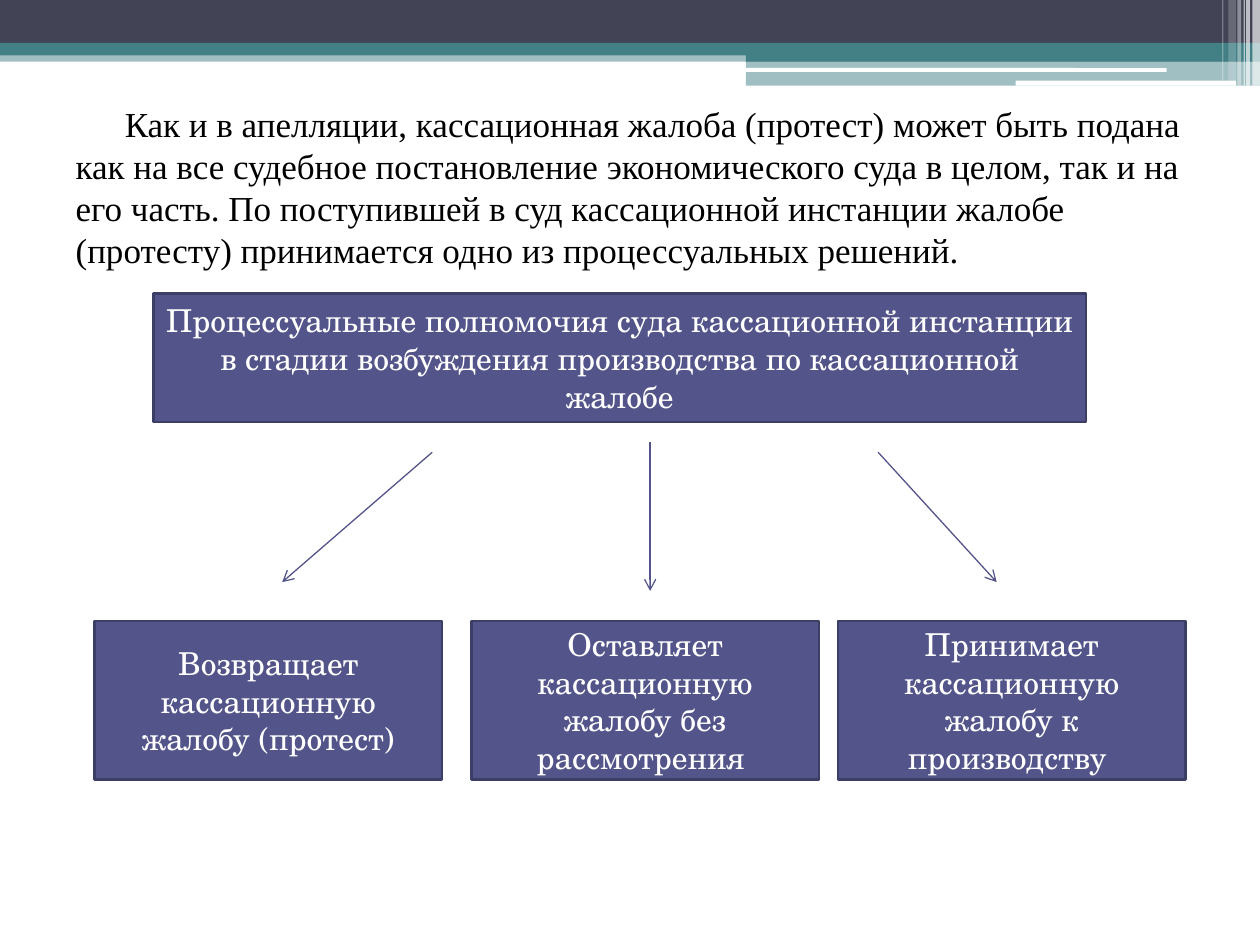
from dataclasses import dataclass
from typing import Any

from lxml import etree
from pptx import Presentation
from pptx import util as u
from pptx.dml.color import RGBColor
from pptx.enum import shapes, text
from pptx.oxml.ns import qn

PX = 9144
WHITE = RGBColor(0xFF, 0xFF, 0xFF)
BLACK = RGBColor(0x00, 0x00, 0x00)
SLATE = RGBColor(0x42, 0x44, 0x56)
TEAL = RGBColor(0x43, 0x80, 0x86)
INDIGO = RGBColor(0x53, 0x54, 0x8A)
NAVY = RGBColor(0x3D, 0x3E, 0x66)

RECT = shapes.MSO_SHAPE.RECTANGLE
ROUNDED = shapes.MSO_SHAPE.ROUNDED_RECTANGLE

INTRO = (
    "Как и в апелляции, кассационная жалоба (протест) может быть подана "
    "как на все судебное постановление экономического суда в целом, так и на "
    "его часть. По поступившей в суд кассационной инстанции жалобе "
    "(протесту) принимается одно из процессуальных решений."
)
POWERS = (
    "Процессуальные полномочия суда кассационной инстанции "
    "в стадии возбуждения производства по кассационной жалобе"
)
BANDS = [
    (0, 40, 1000, 9, TEAL, 50),
    (0, 0, 1000, 34, SLATE, 100),
    (0, 34, 1000, 10, TEAL, 100),
    (592, 39, 408, 10, TEAL, 100),
    (592, 48, 408, 20, TEAL, 50),
]
HIGHLIGHTS = [(591, 54, 335, 3), (806, 64, 175, 4)]
STRIPES = [
    (994, 6, 68, 65),
    (989, 3, 68, 65),
    (987, 1, 68, 60),
    (982, 3, 68, 40),
    (975, 6, 64, 20),
    (970, 1, 64, 30),
]
DECISIONS = [
    (75, "Возвращает кассационную жалобу (протест)"),
    (374, "Оставляет кассационную жалобу без рассмотрения "),
    (665, "Принимает кассационную жалобу к производству "),
]
ARROWS = [(516, 351, 516, 469), (697, 359, 791, 462), (343, 359, 224, 462)]


@dataclass
class Sketch:
    """Draws styled elements on the current slide, in px."""

    slide: Any
    body_font: str = "Times New Roman"
    box_font: str = "TeX Gyre Schola"

    def block(self, x, y, w, h, color, opacity=100, kind=RECT):
        block = self.slide.shapes.add_shape(kind, x * PX, y * PX, w * PX, h * PX)
        block.shadow.inherit = False
        block.fill.solid()
        block.fill.fore_color.rgb = color
        block.line.fill.background()
        if opacity < 100:
            tint = block.fill._xPr.find(".//" + qn("a:srgbClr"))
            etree.SubElement(tint, qn("a:alpha"), val=str(opacity * 1000))
        return block

    def box(self, x, y, w, h, wording):
        box = self.block(x, y, w, h, INDIGO)
        box.line.color.rgb = NAVY
        box.line.width = u.Pt(1.5)
        frame = box.text_frame
        frame.word_wrap = True
        frame.vertical_anchor = text.MSO_ANCHOR.MIDDLE
        paragraph = frame.paragraphs[0]
        paragraph.text = wording
        paragraph.alignment = text.PP_ALIGN.CENTER
        self.style(paragraph, self.box_font, 18, WHITE)

    def body(self, x, y, w, h, wording):
        body = self.slide.placeholders[1]
        body.left, body.top, body.width, body.height = (v * PX for v in (x, y, w, h))
        paragraph = body.text_frame.paragraphs[0]
        paragraph.text = wording
        paragraph.space_before = u.Pt(3)
        self.style(paragraph, self.body_font, 20, BLACK)
        properties = paragraph._p.get_or_add_pPr()
        properties.set("marL", "0")
        properties.set("indent", str(39 * PX))
        properties.insert_element_before(
            properties.makeelement(qn("a:buNone")), "a:tabLst", "a:defRPr", "a:extLst"
        )

    def style(self, paragraph, name, size, color):
        paragraph.font.name = name
        paragraph.font.size = u.Pt(size)
        paragraph.font.color.rgb = color

    def arrow(self, *ends):
        arrow = self.slide.shapes.add_connector(
            shapes.MSO_CONNECTOR.STRAIGHT, *(v * PX for v in ends)
        )
        arrow.line.color.rgb = INDIGO
        arrow.line.width = u.Pt(0.75)
        etree.SubElement(arrow.line._get_or_add_ln(), qn("a:tailEnd"), type="arrow")
        etree.SubElement(arrow._element.spPr, qn("a:effectLst"))


def main():
    deck = Presentation()
    deck.slide_width, deck.slide_height = 1000 * PX, 750 * PX
    slide = deck.slides.add_slide(deck.slide_layouts[1])
    heading = slide.shapes.title._element
    heading.getparent().remove(heading)

    sketch = Sketch(slide)
    for band in BANDS:
        sketch.block(*band)
    for highlight in HIGHLIGHTS:
        sketch.block(*highlight, WHITE, kind=ROUNDED)
    for x, w, h, opacity in STRIPES:
        sketch.block(x, 0, w, h, WHITE, opacity)

    sketch.body(50, 76, 900, 643, INTRO)
    sketch.box(122, 233, 740, 102, POWERS)
    for x, decision in DECISIONS:
        sketch.box(x, 493, 276, 126, decision)
    for ends in ARROWS:
        sketch.arrow(*ends)
    deck.save("out.pptx")


if __name__ == "__main__":
    main()
